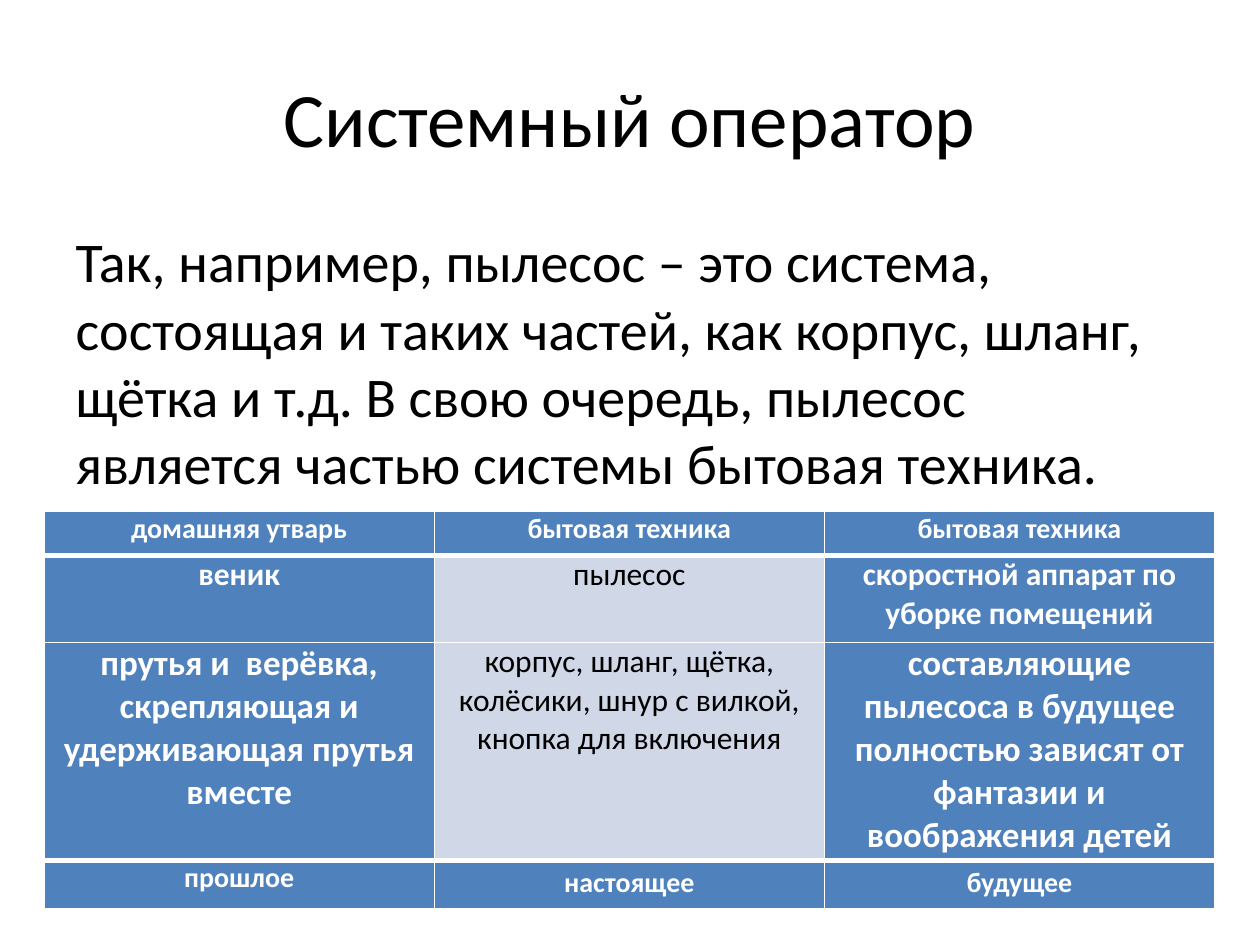
from lxml.etree import SubElement as Sub
from pptx import Presentation
from pptx.dml.color import RGBColor
from pptx.enum.text import MSO_ANCHOR as Anchor, PP_ALIGN as Align
from pptx.oxml.ns import qn
from pptx.util import Inches, Pt

BLUE, PALE, WHITE, BLACK = "4F81BD", "D0D8E8", "FFFFFF", "000000"
ROWS = [
    (0.35, ["домашняя утварь", "бытовая техника", "бытовая техника"], [16, 16, 16]),
    (0.69, ["веник", "пылесос", "скоростной аппарат по уборке помещений"], [18, 18, 18]),
    (1.73, ["прутья и  верёвка, скрепляющая и удерживающая прутья вместе",
            "корпус, шланг, щётка, колёсики, шнур с вилкой, кнопка для включения",
            "составляющие пылесоса в будущее полностью зависят от фантазии и воображения детей"],
     [20, 18, 20]),
    (0.38, ["прошлое", "настоящее", "будущее"], [16, 16, 16]),
]


def paint(target, color):
    if hasattr(target, "solid"):
        target.solid()
        target = target.fore_color
    target.rgb = RGBColor.from_string(color)


def write(frame, text, size, color, align, bold=False):
    para = frame.paragraphs[0]
    para.alignment = align
    run = para.add_run()
    run.text = text
    run.font.name = "Calibri"
    run.font.size = Pt(size)
    run.font.bold = bold
    paint(run.font.color, color)
    return para


def place(shape, box):
    shape.left, shape.top, shape.width, shape.height = map(Inches, box)


def add_title(slide, box, text):
    title = slide.shapes.title
    place(title, box)
    title.text_frame.vertical_anchor = Anchor.MIDDLE
    write(title.text_frame, text, 44, BLACK, Align.CENTER)


def add_body(slide, box, text):
    body = slide.placeholders[1]
    place(body, box)
    para = write(body.text_frame, text, 32, BLACK, Align.LEFT)
    props = para._p.get_or_add_pPr()
    props.set("marL", "0")
    props.set("indent", "0")
    Sub(props, qn("a:buNone"))


def edge(cell, top, base):
    props = cell._tc.get_or_add_tcPr()
    for side, width in (("L", 1), ("R", 1), ("T", top), ("B", base)):
        line = Sub(props, qn("a:ln" + side), w=str(Pt(width)))
        fill = Sub(line, qn("a:solidFill"))
        Sub(fill, qn("a:srgbClr"), val=WHITE)


def add_grid(slide, box, rows):
    count = len(rows[0][1])
    table = slide.shapes.add_table(len(rows), count, *map(Inches, box)).table
    for col in table.columns:
        col.width = Inches(box[2] / count)
    last = len(rows) - 1
    for r, (height, texts, sizes) in enumerate(rows):
        table.rows[r].height = Inches(height)
        for c, (text, size) in enumerate(zip(texts, sizes)):
            cell = table.cell(r, c)
            cell.margin_left = cell.margin_right = Inches(0.07)
            cell.margin_top = cell.margin_bottom = 0
            edge(cell, 3 if r in (1, last) else 1, 3 if r in (0, last - 1) else 1)
            plain = c == 1 and 0 < r < last
            paint(cell.fill, PALE if plain else BLUE)
            para = write(cell.text_frame, text, size, BLACK if plain else WHITE,
                         Align.CENTER, not plain)
            if r == last and c:
                para.line_spacing = 1.15


def main():
    deck = Presentation()
    deck.slide_width, deck.slide_height = Inches(10), Inches(7.5)
    slide = deck.slides.add_slide(deck.slide_layouts[1])
    paint(slide.background.fill, WHITE)
    add_title(slide, (0.5, 0.3, 9, 1.25), "Системный оператор")
    add_body(slide, (0.5, 1.75, 9, 4.95),
             "Так, например, пылесос – это система, состоящая и таких частей, "
             "как корпус, шланг, щётка и т.д. В свою очередь, пылесос "
             "является частью системы бытовая техника.")
    add_grid(slide, (0.35, 4.06, 9.29, 3.15), ROWS)
    deck.save("out.pptx")


if __name__ == "__main__":
    main()
